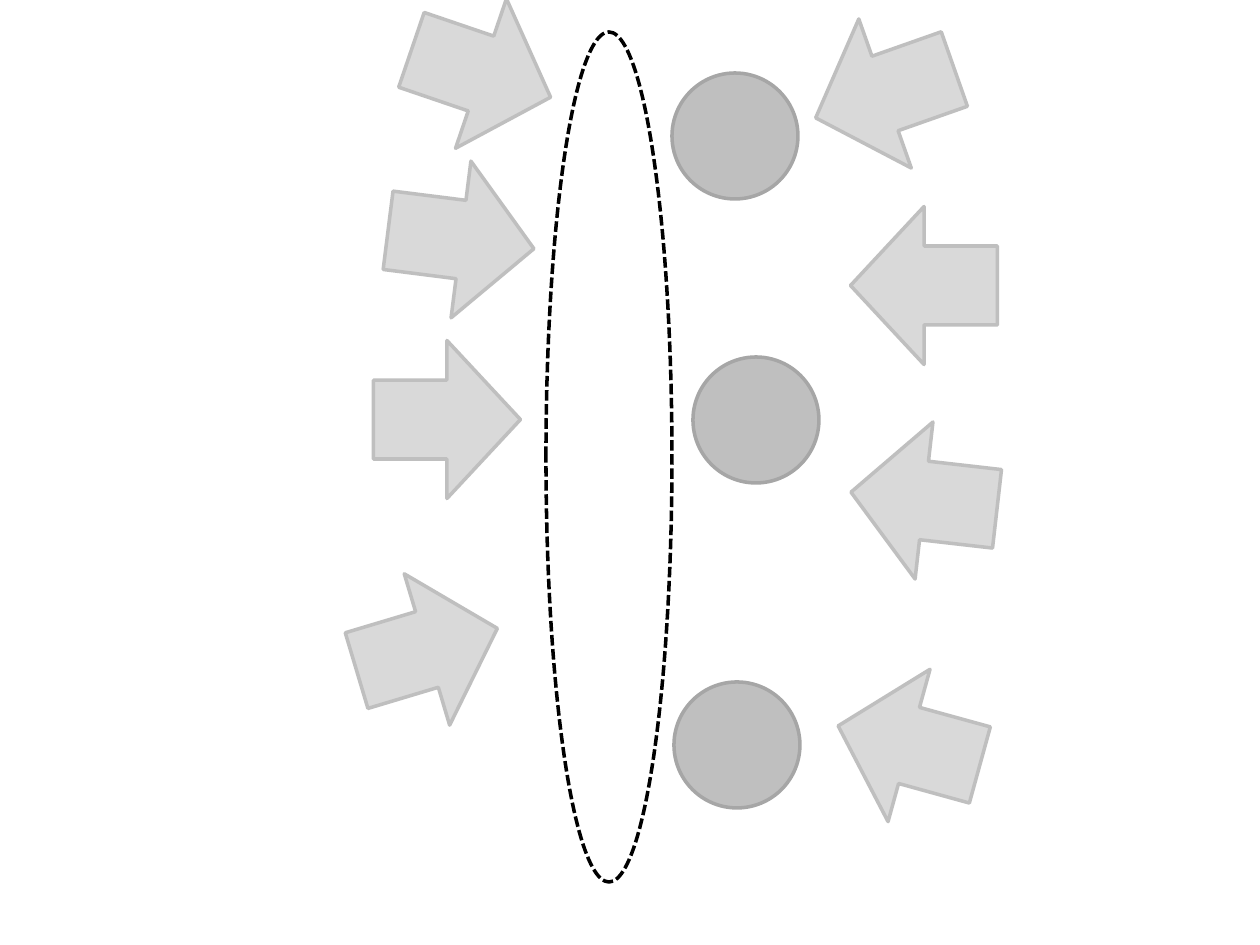
from pptx import Presentation
from pptx.dml.color import RGBColor
from pptx.enum.dml import MSO_LINE
from pptx.enum.shapes import MSO_SHAPE
from pptx.util import Emu, Pt

EMU_PER_PX = 914400 / 126
SLIDE_SIZE = (1260, 945)

BLACK = RGBColor(0x00, 0x00, 0x00)
DARK_GREY = RGBColor(0xA6, 0xA6, 0xA6)
MID_GREY = RGBColor(0xBF, 0xBF, 0xBF)
LIGHT_GREY = RGBColor(0xD9, 0xD9, 0xD9)

MEMBRANE = (546, 32, 126, 850)
CIRCLE_DIAMETER = 126
CIRCLES = [(672, 73), (674, 682), (693, 357)]  # left, top
ARROW_SIZE = (158, 147)
ARROWS = [  # left, top, rotation of a downward arrow
    (402, 0, 288.8),
    (830, 672, 105.4),
    (845, 427, 96.5),
    (845, 212, 90),
    (806, 20, 70.6),
    (348, 576, 253.3),
    (368, 346, 270),
    (382, 166, 277.2),
]


def px(length):
    return Emu(round(length * EMU_PER_PX))


def add_outlined(page, kind, bounds, line_color, fill_color=None):
    """Add a preset shape with a 2 pt outline; no fill colour means hollow."""
    shape = page.shapes.add_shape(kind, *map(px, bounds))
    shape.shadow.inherit = False
    if fill_color is None:
        shape.fill.background()
    else:
        shape.fill.solid()
        shape.fill.fore_color.rgb = fill_color
    shape.line.color.rgb = line_color
    shape.line.width = Pt(2)
    return shape


def main():
    deck = Presentation()
    deck.slide_width, deck.slide_height = map(px, SLIDE_SIZE)
    page = deck.slides.add_slide(deck.slide_layouts[6])

    membrane = add_outlined(page, MSO_SHAPE.OVAL, MEMBRANE, BLACK)
    membrane.line.dash_style = MSO_LINE.SQUARE_DOT

    for left, top in CIRCLES:
        bounds = (left, top, CIRCLE_DIAMETER, CIRCLE_DIAMETER)
        add_outlined(page, MSO_SHAPE.OVAL, bounds, DARK_GREY, MID_GREY)

    for left, top, rotation in ARROWS:
        bounds = (left, top, *ARROW_SIZE)
        arrow = add_outlined(page, MSO_SHAPE.DOWN_ARROW, bounds, MID_GREY, LIGHT_GREY)
        arrow.rotation = rotation

    deck.save("out.pptx")


if __name__ == "__main__":
    main()
